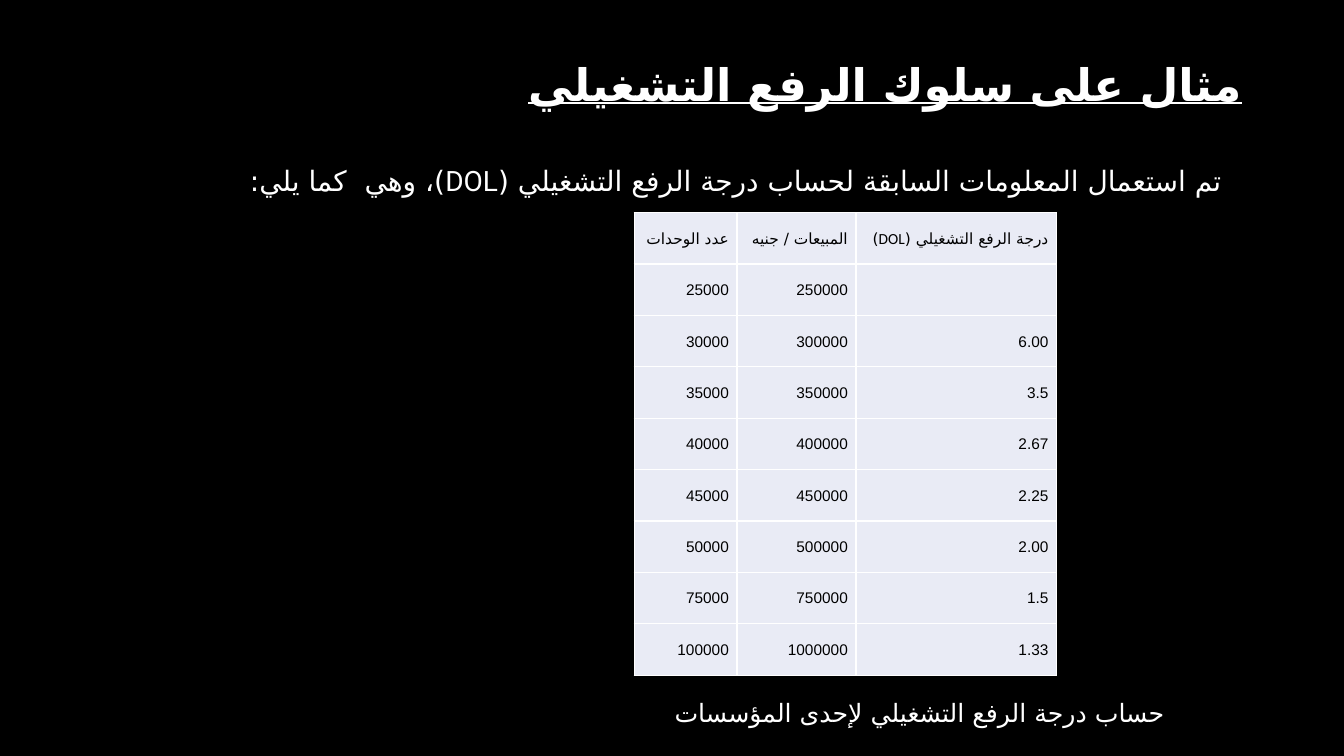
from dataclasses import dataclass

from lxml import etree
from pptx import Presentation
from pptx.dml.color import RGBColor
from pptx.enum import text
from pptx.oxml.ns import qn
from pptx.util import Emu, Pt

PX = 9144  # one hundredth of an inch
WHITE, BLACK, CELL_FILL = "FFFFFF", "000000", "E9EBF5"
ARABIC_FONT, DIGIT_FONT = "DejaVu Sans", "Arial"


@dataclass
class Span:
    words: str
    font: str = "Calibri"
    script_font: str = ARABIC_FONT


@dataclass
class Passage:
    spans: list[Span]
    size: int
    box: tuple[int, int, int, int] = (0, 0, 0, 0)
    color: str = WHITE
    bold: bool = False
    underline: bool = False
    line_spacing: float = 1.0
    before: int = 0
    after: int = 0
    trailing_break: bool = False


TITLE = Passage([Span("مثال على سلوك الرفع التشغيلي")], 32, (92, 40, 1150, 145),
                bold=True, underline=True, line_spacing=0.9, trailing_break=True)
INTRO = Passage([Span("تم استعمال المعلومات السابقة لحساب درجة الرفع التشغيلي ("),
                 Span("DOL)، وهي  كما يلي:", "Roboto")],
                20, (75, 161, 1147, 589), line_spacing=0.9, before=10)
CAPTION = Passage([Span("حساب درجة الرفع التشغيلي لإحدى المؤسسات")],
                  18, (398, 687, 767, 71))

TABLE_LEFT, TABLE_TOP, ROW_HEIGHT, CELL_MARGIN = 629, 211, 51, 8
COLUMN_WIDTHS = (102, 118, 199)
UNIT_PRICE = 10
LEVERAGE_BY_UNITS = {25000: "", 30000: "6.00", 35000: "3.5", 40000: "2.67",
                     45000: "2.25", 50000: "2.00", 75000: "1.5", 100000: "1.33"}
ROWS = [("عدد الوحدات", "المبيعات / جنيه", "درجة الرفع التشغيلي (DOL)")]
ROWS += [(str(units), str(units * UNIT_PRICE), leverage)
         for units, leverage in LEVERAGE_BY_UNITS.items()]


def px(length: int) -> Emu:
    return Emu(length * PX)


def rgb(color: str) -> RGBColor:
    return RGBColor.from_string(color)


def apply(target, values: dict) -> None:
    for name, value in values.items():
        setattr(target, name, value)


def write(frame, passage: Passage) -> None:
    """Fill a text frame with one right-to-left paragraph."""
    paragraph = frame.paragraphs[0]
    apply(paragraph, {"alignment": text.PP_ALIGN.RIGHT,
                      "line_spacing": passage.line_spacing,
                      "space_before": Pt(passage.before),
                      "space_after": Pt(passage.after)})
    paragraph._p.get_or_add_pPr().set("rtl", "1")
    for span in passage.spans:
        run = paragraph.add_run()
        run.text = span.words
        apply(run.font, {"name": span.font, "size": Pt(passage.size),
                         "bold": passage.bold, "underline": passage.underline})
        run.font.color.rgb = rgb(passage.color)
        etree.SubElement(run._r.get_or_add_rPr(), qn("a:cs"), typeface=span.script_font)
    if passage.trailing_break:
        size = str(passage.size * 100)
        line_break = etree.SubElement(paragraph._p, qn("a:br"))
        etree.SubElement(line_break, qn("a:rPr"), sz=size)
        etree.SubElement(paragraph._p, qn("a:endParaRPr"), sz=size)


def place(shape, passage: Passage, anchor, auto_size) -> None:
    left, top, width, height = map(px, passage.box)
    apply(shape, {"left": left, "top": top, "width": width, "height": height})
    apply(shape.text_frame, {"word_wrap": True, "vertical_anchor": anchor,
                             "auto_size": auto_size})
    write(shape.text_frame, passage)


def add_borders(cell) -> None:
    properties = cell._tc.get_or_add_tcPr()
    for position, side in enumerate(("a:lnL", "a:lnR", "a:lnT", "a:lnB")):
        line = etree.Element(qn(side), w=str(Pt(1)))
        fill = etree.SubElement(line, qn("a:solidFill"))
        etree.SubElement(fill, qn("a:srgbClr"), val=WHITE)
        properties.insert(position, line)


def add_leverage_table(slide) -> None:
    table = slide.shapes.add_table(
        len(ROWS), len(COLUMN_WIDTHS), px(TABLE_LEFT), px(TABLE_TOP),
        px(sum(COLUMN_WIDTHS)), px(ROW_HEIGHT * len(ROWS))).table
    apply(table, {"first_row": False, "horz_banding": False})
    for column, width in zip(table.columns, COLUMN_WIDTHS):
        column.width = px(width)
    margins = {f"margin_{side}": px(CELL_MARGIN)
               for side in ("left", "right", "top", "bottom")}
    for row_number, (row, entries) in enumerate(zip(table.rows, ROWS)):
        row.height = px(ROW_HEIGHT)
        script_font = DIGIT_FONT if row_number else ARABIC_FONT
        for cell, entry in zip(row.cells, entries):
            apply(cell, {"vertical_anchor": text.MSO_ANCHOR.MIDDLE, **margins})
            cell.fill.solid()
            cell.fill.fore_color.rgb = rgb(CELL_FILL)
            add_borders(cell)
            if entry:
                write(cell.text_frame,
                      Passage([Span(entry, script_font=script_font)], 11, color=BLACK,
                              line_spacing=1.06, before=5, after=8))


def main() -> None:
    deck = Presentation()
    apply(deck, {"slide_width": px(1333), "slide_height": px(750)})
    slide = deck.slides.add_slide(deck.slide_layouts[5])
    slide.background.fill.solid()
    slide.background.fill.fore_color.rgb = rgb(BLACK)

    # Title and introduction
    place(slide.shapes.title, TITLE, text.MSO_ANCHOR.MIDDLE, text.MSO_AUTO_SIZE.NONE)
    intro = slide.shapes.add_textbox(0, 0, 0, 0)
    place(intro, INTRO, text.MSO_ANCHOR.TOP, text.MSO_AUTO_SIZE.NONE)

    # Table and its caption
    add_leverage_table(slide)
    caption = slide.shapes.add_textbox(0, 0, 0, 0)
    place(caption, CAPTION, text.MSO_ANCHOR.TOP, text.MSO_AUTO_SIZE.SHAPE_TO_FIT_TEXT)

    deck.save("out.pptx")


if __name__ == "__main__":
    main()
